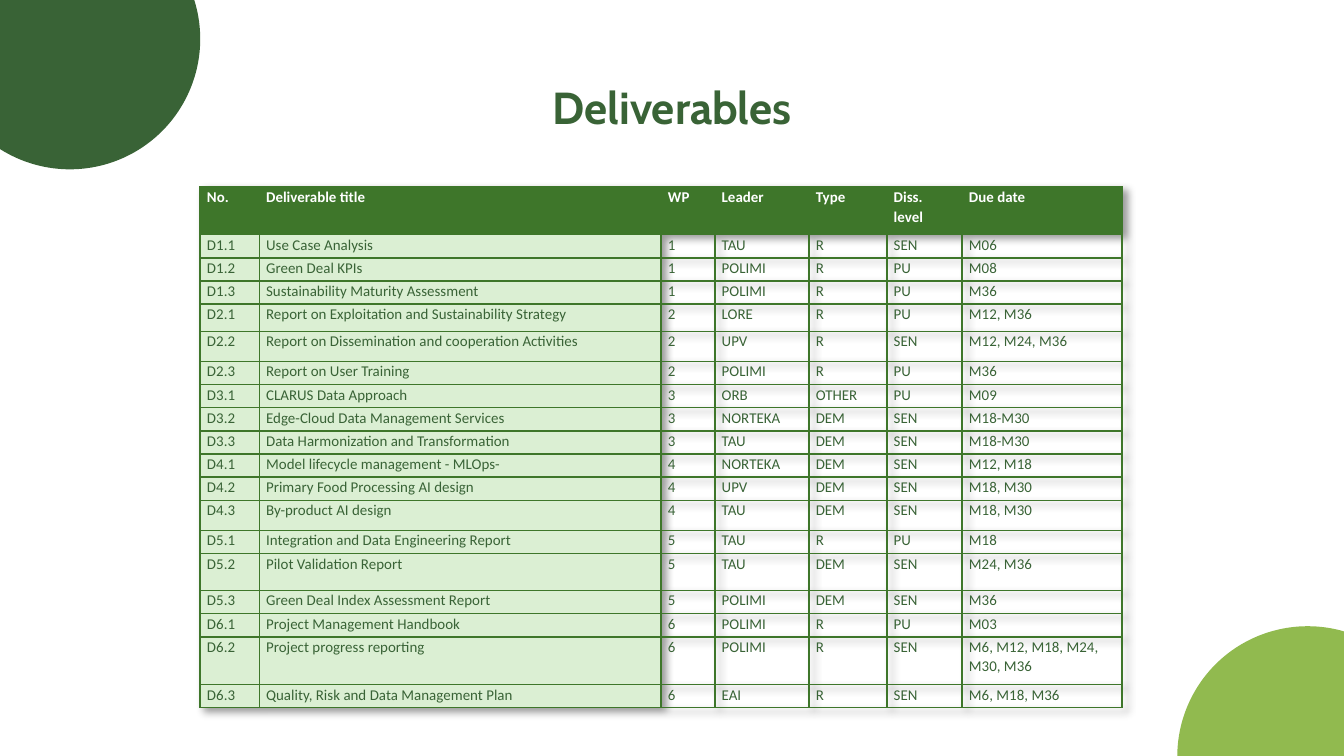
from lxml.etree import SubElement
from pptx import Presentation
from pptx.dml.color import RGBColor
from pptx.enum.shapes import MSO_SHAPE
from pptx.enum.text import MSO_ANCHOR, PP_ALIGN
from pptx.oxml import parse_xml
from pptx.oxml.ns import nsdecls, qn
from pptx.util import Inches, Pt

DARK_GREEN = RGBColor(0x39, 0x63, 0x36)
LIGHT_GREEN = RGBColor(0x91, 0xBA, 0x4F)
TABLE_GREEN = RGBColor(0x3E, 0x76, 0x2A)
PALE_GREEN = RGBColor(0xDB, 0xEF, 0xD3)
WHITE = RGBColor(0xFF, 0xFF, 0xFF)

COL_WIDTHS = [0.44, 2.99, 0.4, 0.7, 0.58, 0.56, 1.19]
TABLE_HEIGHT = 3.88
ROW_HEIGHT = 0.17
TALL_ROWS = {0: 0.35, 4: 0.2, 5: 0.22, 12: 0.22, 14: 0.27, 17: 0.35}

ROWS = [
    ("No.", "Deliverable title", "WP", "Leader", "Type", "Diss. level", "Due date"),
    ("D1.1", "Use Case Analysis", "1", "TAU", "R", "SEN", "M06"),
    ("D1.2", "Green Deal KPIs", "1", "POLIMI", "R", "PU", "M08"),
    ("D1.3", "Sustainability Maturity Assessment", "1", "POLIMI", "R", "PU", "M36"),
    ("D2.1", "Report on Exploitation and Sustainability Strategy", "2", "LORE", "R", "PU",
     "M12, M36"),
    ("D2.2", "Report on Dissemination and cooperation Activities", "2", "UPV", "R", "SEN",
     "M12, M24, M36"),
    ("D2.3", "Report on User Training", "2", "POLIMI", "R", "PU", "M36"),
    ("D3.1", "CLARUS Data Approach", "3", "ORB", "OTHER", "PU", "M09"),
    ("D3.2", "Edge-Cloud Data Management Services", "3", "NORTEKA", "DEM", "SEN", "M18-M30"),
    ("D3.3", "Data Harmonization and Transformation", "3", "TAU", "DEM", "SEN", "M18-M30"),
    ("D4.1", "Model lifecycle management - MLOps-", "4", "NORTEKA", "DEM", "SEN", "M12, M18"),
    ("D4.2", "Primary Food Processing AI design", "4", "UPV", "DEM", "SEN", "M18, M30"),
    ("D4.3", "By-product AI design", "4", "TAU", "DEM", "SEN", "M18, M30"),
    ("D5.1", "Integration and Data Engineering Report", "5", "TAU", "R", "PU", "M18"),
    ("D5.2", "Pilot Validation Report", "5", "TAU", "DEM", "SEN", "M24, M36"),
    ("D5.3", "Green Deal Index Assessment Report", "5", "POLIMI", "DEM", "SEN", "M36"),
    ("D6.1", "Project Management Handbook", "6", "POLIMI", "R", "PU", "M03"),
    ("D6.2", "Project progress reporting", "6", "POLIMI", "R", "SEN",
     "M6, M12, M18, M24, M30, M36"),
    ("D6.3", "Quality, Risk and Data Management Plan", "6", "EAI", "R", "SEN", "M6, M18, M36"),
]


def add_circle(s, left, top, size, color):
    """Add a plain filled circle."""
    sp = s.shapes.add_shape(MSO_SHAPE.OVAL, Inches(left), Inches(top), Inches(size), Inches(size))
    sp.shadow.inherit = False
    sp.fill.solid()
    sp.fill.fore_color.rgb = color
    sp.line.fill.background()


def add_run(p, text, font, size, color, bold):
    """Add one formatted run to a paragraph."""
    r = p.add_run()
    r.text = text
    r.font.name = font
    r.font.size = Pt(size)
    r.font.bold = bold
    r.font.color.rgb = color


def add_title(s, text):
    """Add the centred slide title."""
    sp = s.shapes.add_textbox(Inches(0.34), Inches(0.49), Inches(9.32), Inches(0.63))
    tf = sp.text_frame
    tf.word_wrap = True
    tf.vertical_anchor = MSO_ANCHOR.TOP
    tf.margin_left = tf.margin_right = tf.margin_top = tf.margin_bottom = Inches(0.1)
    p = tf.paragraphs[0]
    p.alignment = PP_ALIGN.CENTER
    add_run(p, text, "Cabin", 24, DARK_GREEN, True)


def set_borders(cell):
    """Draw a thin green line on all four sides of a cell."""
    tc_pr = cell._tc.get_or_add_tcPr()
    for side in ("a:lnL", "a:lnR", "a:lnT", "a:lnB"):
        ln = SubElement(tc_pr, qn(side), w=str(Pt(1)))
        fill = SubElement(ln, qn("a:solidFill"))
        SubElement(fill, qn("a:srgbClr"), val=str(TABLE_GREEN))


def set_cell(cell, text, is_header, fill):
    """Format one table cell and write its text."""
    set_borders(cell)
    if fill is None:
        cell.fill.background()
    else:
        cell.fill.solid()
        cell.fill.fore_color.rgb = fill
    cell.margin_left = cell.margin_right = Inches(0.05)
    cell.margin_top = cell.margin_bottom = Inches(0)
    p = cell.text_frame.paragraphs[0]
    p.line_spacing = 1.07
    p.space_after = Pt(8)
    add_run(p, text, "Calibri", 8, WHITE if is_header else DARK_GREEN, is_header)


def add_shadow(table):
    """Give the table a soft shadow to the lower right."""
    table._tbl.tblPr.insert(0, parse_xml(
        f'<a:effectLst {nsdecls("a")}>'
        '<a:outerShdw blurRad="50800" dist="38100" dir="2700000" algn="tl" rotWithShape="0">'
        '<a:prstClr val="black"><a:alpha val="40000"/></a:prstClr>'
        '</a:outerShdw></a:effectLst>'))


def add_deliverables_table(s):
    """Add the table of deliverables."""
    table = s.shapes.add_table(
        len(ROWS), len(COL_WIDTHS), Inches(1.49), Inches(1.39),
        Inches(sum(COL_WIDTHS)), Inches(TABLE_HEIGHT)).table
    table.first_row = table.horz_banding = False
    add_shadow(table)
    for column, width in zip(table.columns, COL_WIDTHS):
        column.width = Inches(width)
    heights = [TALL_ROWS.get(i, ROW_HEIGHT) for i in range(len(ROWS))]
    scale = TABLE_HEIGHT / sum(heights)
    for i, values in enumerate(ROWS):
        table.rows[i].height = Inches(heights[i] * scale)
        for j, text in enumerate(values):
            fill = TABLE_GREEN if i == 0 else PALE_GREEN if j < 2 else None
            set_cell(table.cell(i, j), text, i == 0, fill)


def main():
    """Build and save the slide."""
    prs = Presentation()
    prs.slide_width = Inches(10)
    prs.slide_height = prs.slide_width * 9 // 16
    s = prs.slides.add_slide(prs.slide_layouts[6])
    add_circle(s, -0.45, -0.68, 1.94, DARK_GREEN)
    add_circle(s, 8.76, 4.66, 1.94, LIGHT_GREEN)
    add_title(s, "Deliverables")
    add_deliverables_table(s)
    prs.save("out.pptx")


if __name__ == "__main__":
    main()
